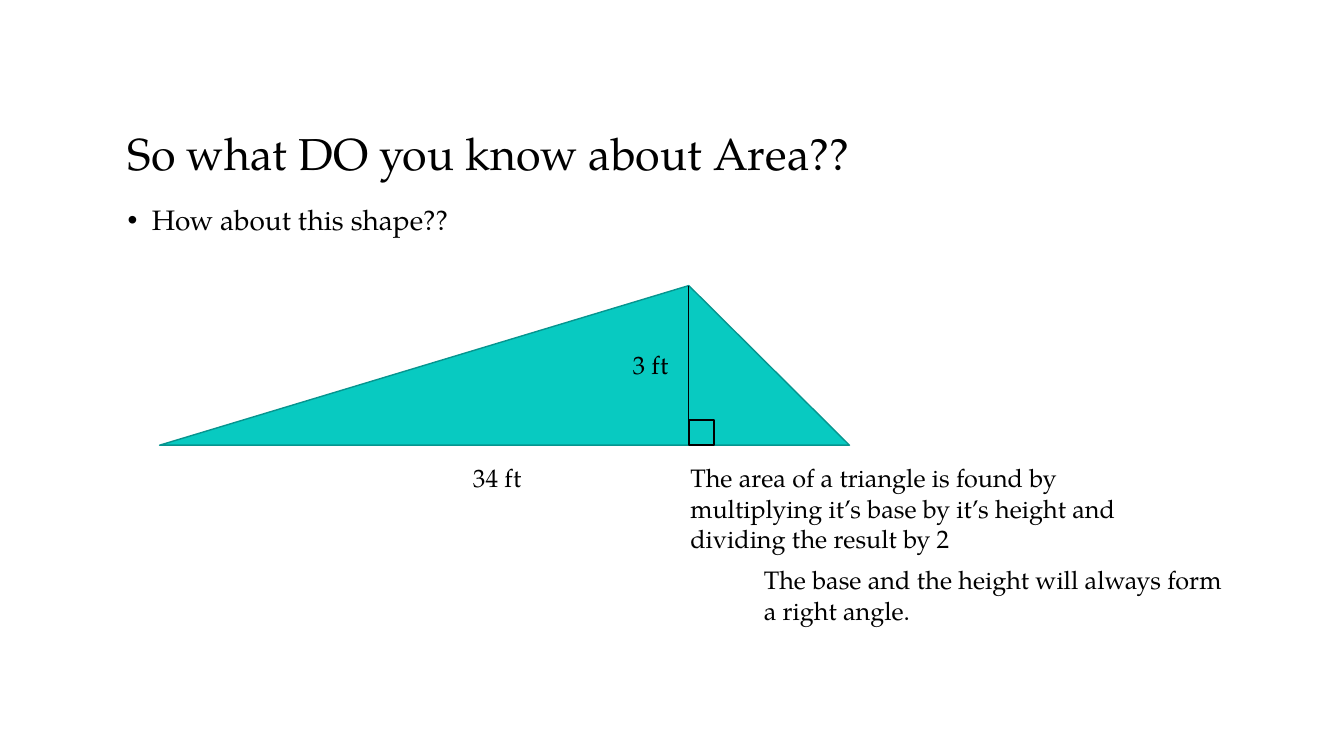
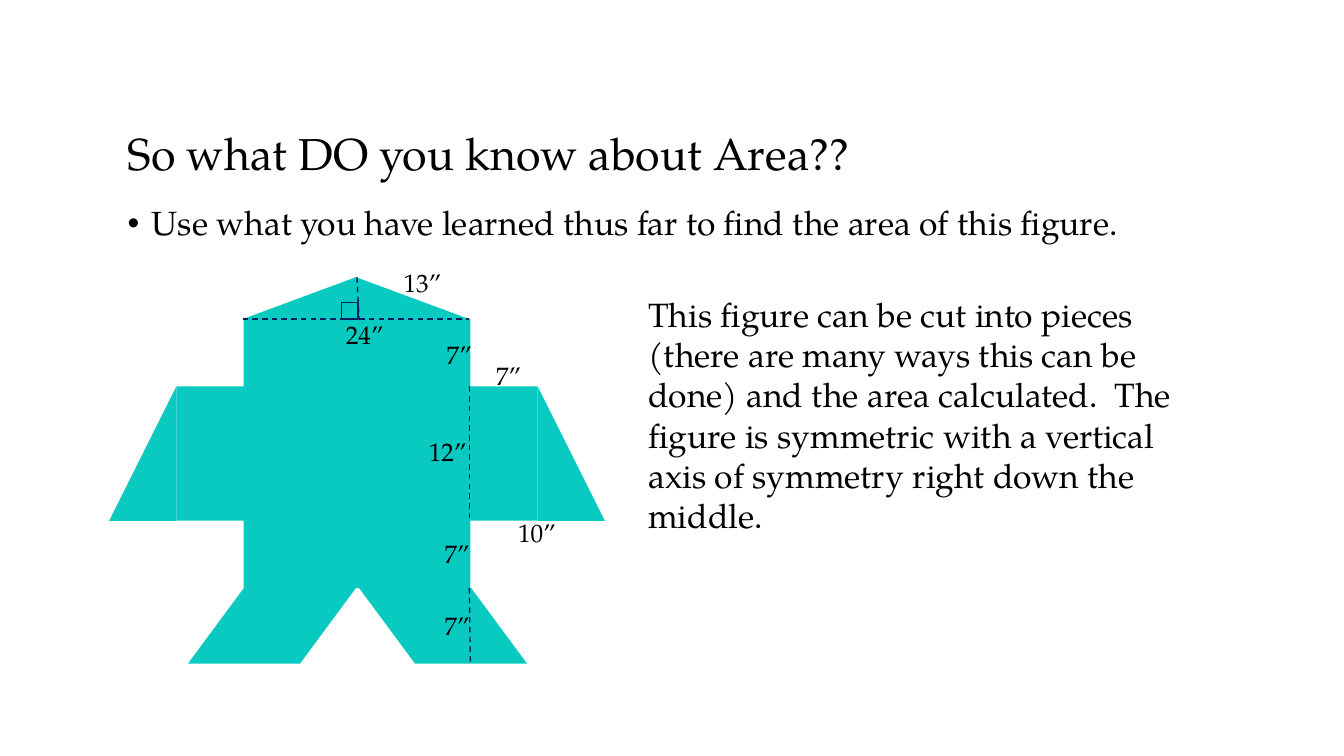
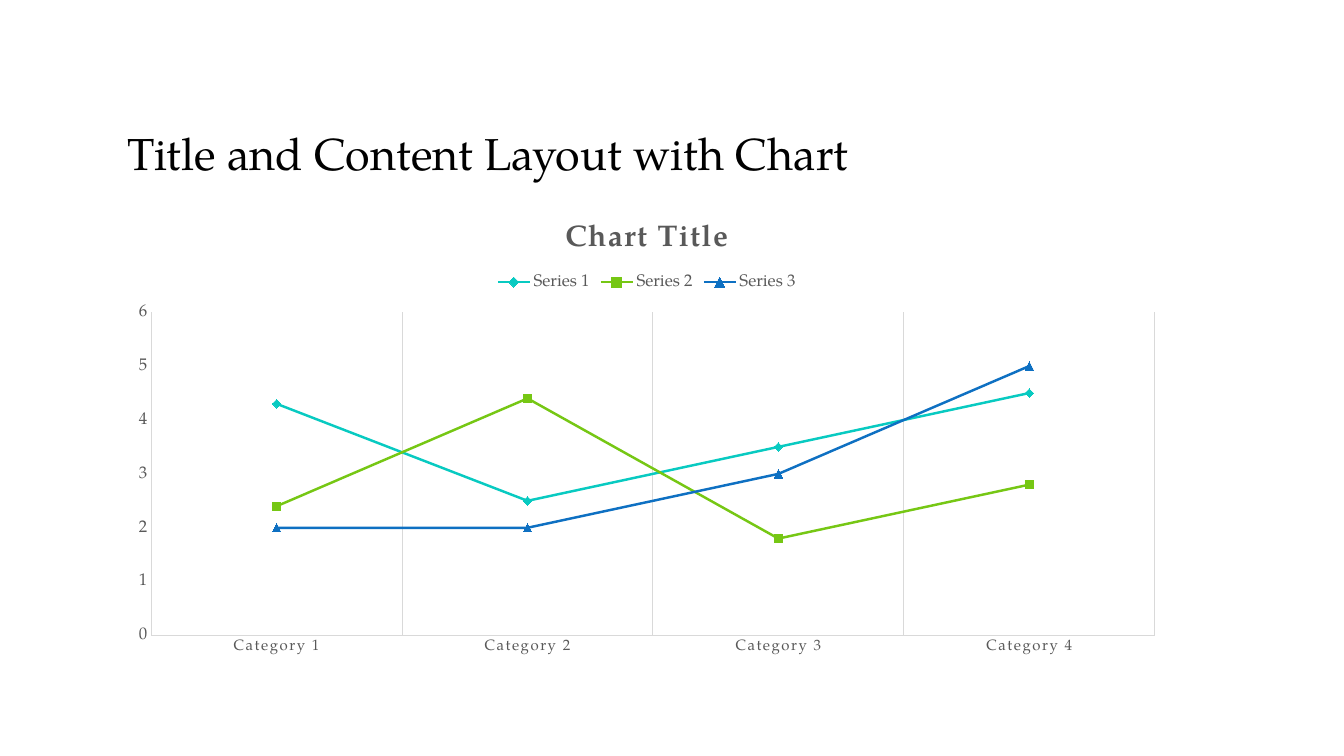
from lxml.etree import SubElement
from pptx import Presentation
from pptx.chart.data import CategoryChartData
from pptx.dml.color import RGBColor
from pptx.enum.chart import XL_CHART_TYPE, XL_LEGEND_POSITION, XL_MARKER_STYLE, XL_TICK_MARK
from pptx.enum.dml import MSO_LINE
from pptx.enum.shapes import MSO_CONNECTOR, MSO_SHAPE
from pptx.enum.text import MSO_ANCHOR, MSO_AUTO_SIZE, PP_ALIGN
from pptx.oxml.ns import qn
from pptx.util import Pt

PX = 9525
FONT = "TeX Gyre Pagella"
BLACK = RGBColor(0x00, 0x00, 0x00)
TEAL = RGBColor(0x08, 0xCA, 0xC1)
DARK_TEAL = RGBColor(0x06, 0x95, 0x8F)
GREEN = RGBColor(0x76, 0xC7, 0x14)
BLUE = RGBColor(0x0E, 0x70, 0xC2)
NAVY = RGBColor(0x00, 0x20, 0x60)
GREY = RGBColor(0x59, 0x59, 0x59)
LIGHT_GREY = RGBColor(0xD9, 0xD9, 0xD9)
CONTENT_LAYOUT, TITLE_LAYOUT = 1, 5
AREA_TITLE = "So what DO you know about Area??"


def px(*lengths):
    """Turn px lengths into EMU."""
    return [length * PX for length in lengths]


def style_font(font, size, color=BLACK, bold=False, tracking=0):
    """Format a font, with tracking in points."""
    font.name, font.size, font.bold = FONT, Pt(size), bold
    font.color.rgb = color
    if tracking:
        font._element.set("spc", str(round(tracking * 100)))


def write(frame, text, size=18, spacing=None, bullet=False, anchor=MSO_ANCHOR.TOP,
          fit=MSO_AUTO_SIZE.NONE, **font_format):
    """Fill a text frame with one formatted paragraph."""
    frame.word_wrap, frame.auto_size, frame.vertical_anchor = True, fit, anchor
    paragraph = frame.paragraphs[0]
    if bullet:
        properties = paragraph._p.get_or_add_pPr()
        properties.set("marL", str(23 * PX))
        properties.set("indent", str(-23 * PX))
        SubElement(properties, qn("a:buFont")).set("typeface", "Arial")
        SubElement(properties, qn("a:buChar")).set("char", "•")
    paragraph.alignment = PP_ALIGN.LEFT
    paragraph.space_before = Pt(0)
    if spacing:
        paragraph.line_spacing = spacing
    run = paragraph.add_run()
    run.text = text
    style_font(run.font, size, **font_format)


def place(shape, *box):
    """Move a placeholder to a px box."""
    shape.left, shape.top, shape.width, shape.height = px(*box)


def add_slide(deck, title, layout=CONTENT_LAYOUT):
    """Add a slide with the shared title style."""
    slide = deck.slides.add_slide(deck.slide_layouts[layout])
    place(slide.shapes.title, 112, 56, 1008, 120)
    write(slide.shapes.title.text_frame, title, size=32, spacing=0.9,
          anchor=MSO_ANCHOR.BOTTOM)
    return slide


def add_bullet(slide, text, width, height, size):
    """Put the bulleted prompt in the body placeholder."""
    prompt = slide.placeholders[1]
    place(prompt, 112, 192, width, height)
    write(prompt.text_frame, text, size=size, spacing=0.9, bullet=True)


def add_label(slide, text, left, top, width=56, height=39, size=18):
    """Add a free text label."""
    label = slide.shapes.add_textbox(*px(left, top, width, height))
    write(label.text_frame, text, size=size, fit=MSO_AUTO_SIZE.SHAPE_TO_FIT_TEXT)


def add_piece(slide, preset, *box, outline=None, adjust=None, mirrored=False):
    """Add a teal preset shape."""
    piece = slide.shapes.add_shape(preset, *px(*box))
    piece.shadow.inherit = False
    piece.fill.solid()
    piece.fill.fore_color.rgb = TEAL
    if outline is None:
        piece.line.fill.background()
    else:
        piece.line.color.rgb, piece.line.width = outline, Pt(1)
    if adjust is not None:
        piece.adjustments[0] = adjust
    if mirrored:
        piece._element.spPr.xfrm.set("flipH", "1")


def add_measure(slide, *ends, color=NAVY, weight=1, dash=MSO_LINE.DASH):
    """Add a straight measuring line."""
    measure = slide.shapes.add_connector(MSO_CONNECTOR.STRAIGHT, *px(*ends))
    measure.line.color.rgb, measure.line.width = color, Pt(weight)
    if dash:
        measure.line.dash_style = dash
    SubElement(measure._element.spPr, qn("a:effectLst"))


def build_triangle(deck):
    """Build the triangle area slide."""
    slide = add_slide(deck, AREA_TITLE)
    add_bullet(slide, "How about this shape??", 632, 48, 20)
    add_label(slide, "34 ft", 441, 436, 80)
    add_label(slide, "The area of a triangle is found by multiplying it’s base by it’s "
              "height and dividing the result by 2", 648, 436, 456, 97)
    left, top, base, height, apex = 152, 272, 657, 152, 656
    add_piece(slide, MSO_SHAPE.ISOSCELES_TRIANGLE, left, top, base, height,
              outline=DARK_TEAL, adjust=(apex - left) / base)
    add_label(slide, "3 ft", 593, 328)
    add_measure(slide, apex, top + height, apex, top, color=BLACK, weight=0.5, dash=None)
    add_piece(slide, MSO_SHAPE.RECTANGLE, apex, top + height - 24, 24, 24, outline=BLACK)
    add_label(slide, "The base and the height will always form a right angle.",
              718, 533, 456, 68)


def build_figure(deck):
    """Build the composite figure slide."""
    slide = add_slide(deck, AREA_TITLE)
    add_bullet(slide, "Use what you have learned thus far to find the area of this figure.",
               1000, 58, 24)
    add_piece(slide, MSO_SHAPE.CROSS, 168, 304, 344, 256)
    for arm_left, leg_left, left_side in ((512, 342, False), (104, 179, True)):
        add_piece(slide, MSO_SHAPE.RIGHT_TRIANGLE, arm_left, 368, 64, 128,
                  mirrored=left_side)
        add_piece(slide, MSO_SHAPE.PARALLELOGRAM, leg_left, 560, 160, 72,
                  adjust=0.74, mirrored=not left_side)
    add_piece(slide, MSO_SHAPE.ISOSCELES_TRIANGLE, 231, 264, 216, 40)
    for ends in ((231, 304, 447, 304), (340, 264, 342, 304),
                 (447, 368, 447, 496), (447, 560, 448, 632)):
        add_measure(slide, *ends)
    add_piece(slide, MSO_SHAPE.RECTANGLE, 325, 288, 16, 16, outline=NAVY)
    for text, left, top in (("24”", 320, 299), ("13”", 375, 250), ("7”", 463, 338),
                            ("10”", 484, 488), ("7”", 416, 318), ("12”", 399, 411),
                            ("7”", 414, 508), ("7”", 414, 577)):
        add_label(slide, text, left, top)
    add_label(slide, "This figure can be cut into pieces (there are many ways this can be "
              "done) and the area calculated.  The figure is symmetric with a vertical "
              "axis of symmetry right down the middle.", 608, 275, 520, 242, size=24)


def style_axis(axis, size, tracking=0):
    """Format an axis line and its labels."""
    axis.major_tick_mark = axis.minor_tick_mark = XL_TICK_MARK.NONE
    axis.format.line.color.rgb, axis.format.line.width = LIGHT_GREY, Pt(0.75)
    style_font(axis.tick_labels.font, size, color=GREY, tracking=tracking)


def style_series(series, color, marker):
    """Format a line and its markers."""
    series.smooth = False
    series.format.line.color.rgb, series.format.line.width = color, Pt(1.75)
    series.marker.style, series.marker.size = marker, 6
    series.marker.format.fill.solid()
    series.marker.format.fill.fore_color.rgb = color
    series.marker.format.line.color.rgb = color


def build_chart(deck):
    """Build the line chart slide."""
    slide = add_slide(deck, "Title and Content Layout with Chart", TITLE_LAYOUT)
    data = CategoryChartData()
    data.categories = [f"Category {number}" for number in range(1, 5)]
    data.add_series("Series 1", (4.3, 2.5, 3.5, 4.5))
    data.add_series("Series 2", (2.4, 4.4, 1.8, 2.8))
    data.add_series("Series 3", (2, 2, 3, 5))
    chart = slide.shapes.add_chart(XL_CHART_TYPE.LINE_MARKERS,
                                   *px(112, 192, 1008, 440), data).chart
    style_font(chart.font, 10)
    chart.has_title = True
    heading = chart.chart_title.text_frame.paragraphs[0].add_run()
    heading.text = "Chart Title"
    style_font(heading.font, 21.28, color=GREY, bold=True, tracking=1.2)
    chart.has_legend = True
    chart.legend.position = XL_LEGEND_POSITION.TOP
    chart.legend.include_in_layout = False
    style_font(chart.legend.font, 12, color=GREY)
    style_axis(chart.category_axis, 10.64, tracking=1.2)
    style_axis(chart.value_axis, 12)
    chart.category_axis.has_major_gridlines = True
    gridline = chart.category_axis.major_gridlines.format.line
    gridline.color.rgb, gridline.width = LIGHT_GREY, Pt(0.75)
    chart.value_axis.has_major_gridlines = False
    chart.value_axis.minimum_scale, chart.value_axis.maximum_scale = 0, 6
    chart.value_axis.major_unit = 1
    plot = chart.plots[0]
    plot.vary_by_categories = False
    markers = (XL_MARKER_STYLE.DIAMOND, XL_MARKER_STYLE.SQUARE, XL_MARKER_STYLE.TRIANGLE)
    for series, color, marker in zip(plot.series, (TEAL, GREEN, BLUE), markers):
        style_series(series, color, marker)


def main():
    """Build and save the deck."""
    deck = Presentation()
    deck.slide_width, deck.slide_height = px(1280, 720)
    build_triangle(deck)
    build_figure(deck)
    build_chart(deck)
    deck.save("out.pptx")


if __name__ == "__main__":
    main()
